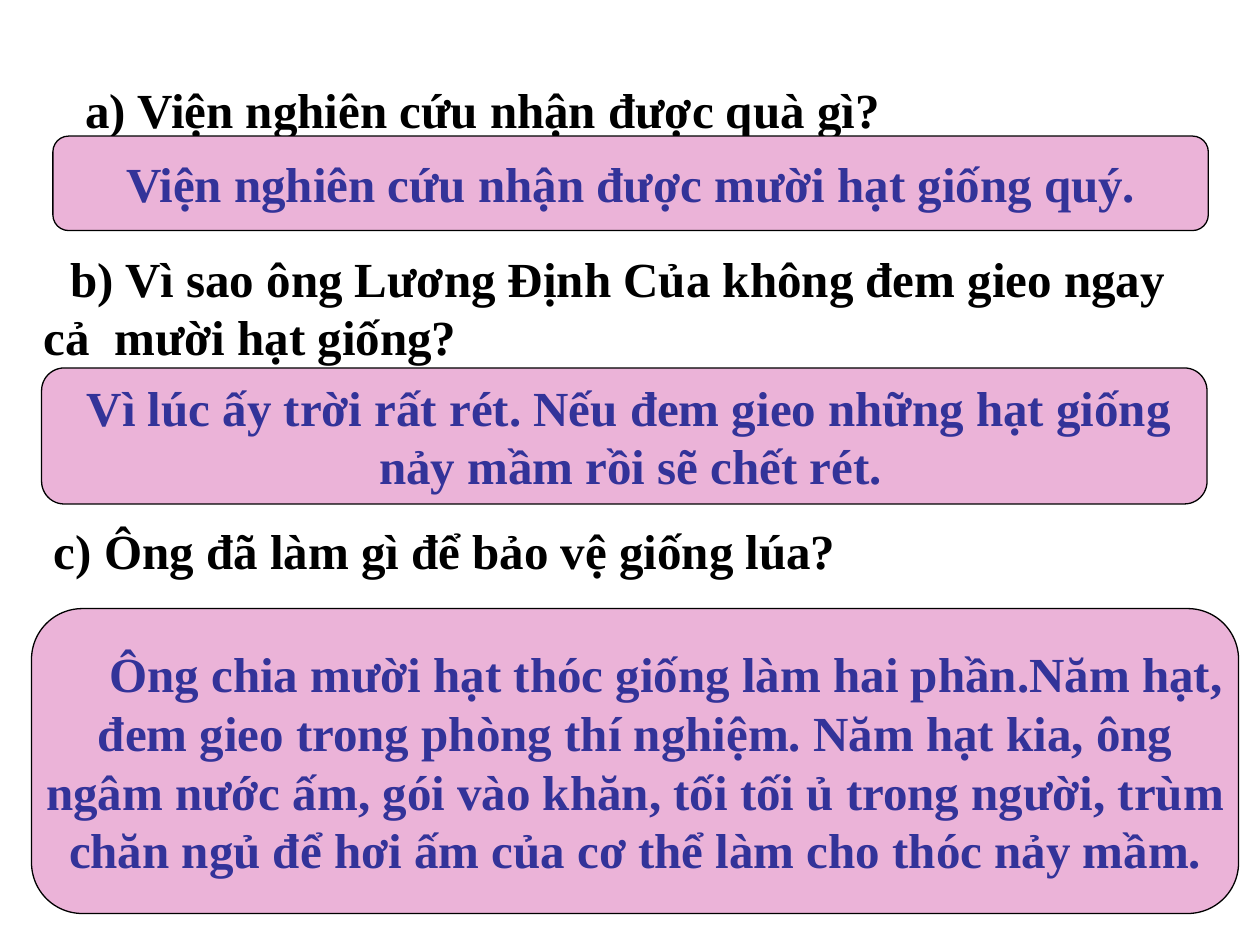
from pptx import Presentation
from pptx.dml.color import RGBColor
from pptx.enum.shapes import MSO_SHAPE
from pptx.enum.text import MSO_ANCHOR, MSO_AUTO_SIZE, PP_ALIGN
from pptx.util import Inches, Pt

BLACK = RGBColor(0x00, 0x00, 0x00)
PINK = RGBColor(0xEB, 0xB3, 0xD8)
INDIGO = RGBColor(0x33, 0x33, 0x99)

ITEMS = [
    ((0.58, 0.58, 8.92, 0.57), 0,
     "a) Viện nghiên cứu nhận được quà gì?",
     (0.42, 1.08, 9.17, 0.75),
     [(0, "Viện nghiên cứu nhận được mười hạt giống quý.")]),
    ((0.25, 1.92, 9.25, 1.03), 0.21,
     "b) Vì sao ông Lương Định Của không đem gieo ngay  cả  mười hạt giống?",
     (0.33, 2.92, 9.25, 1.08),
     [(0.07, "Vì lúc ấy trời rất rét. Nếu đem gieo những hạt giống"),
      (0.1, "nảy mầm rồi sẽ chết rét.")]),
    ((0.33, 4.08, 9.17, 0.57), 0,
     "c) Ông đã làm gì để bảo vệ giống lúa?",
     (0.25, 4.83, 9.58, 2.42),
     [(0.49, "Ông chia mười hạt thóc giống làm hai phần.Năm hạt,"),
      (0, "đem gieo trong phòng thí nghiệm. Năm hạt kia, ông"),
      (0, "ngâm nước ấm, gói vào khăn, tối tối ủ trong người, trùm"),
      (0, "chăn ngủ để hơi ấm của cơ thể làm cho thóc nảy mầm.")]),
]


def write_lines(tf, lines, color, align):
    for i, (indent, text) in enumerate(lines):
        p = tf.add_paragraph() if i else tf.paragraphs[0]
        p.text = text
        p.alignment = align
        p.font.name = "Times New Roman"
        p.font.size = Pt(28)
        p.font.bold = True
        p.font.color.rgb = color
        if indent:
            p._p.get_or_add_pPr().set("indent", str(Inches(indent)))


def add_question(s, box, indent, text):
    tf = s.shapes.add_textbox(*map(Inches, box)).text_frame
    tf.word_wrap = True
    tf.auto_size = MSO_AUTO_SIZE.SHAPE_TO_FIT_TEXT
    write_lines(tf, [(indent, text)], BLACK, PP_ALIGN.LEFT)


def add_answer(s, box, lines):
    sp = s.shapes.add_shape(MSO_SHAPE.FLOWCHART_ALTERNATE_PROCESS, *map(Inches, box))
    sp.shadow.inherit = False
    sp.fill.solid()
    sp.fill.fore_color.rgb = PINK
    sp.line.color.rgb = BLACK
    sp.line.width = Pt(0.75)
    tf = sp.text_frame
    tf.word_wrap = False
    tf.vertical_anchor = MSO_ANCHOR.MIDDLE
    write_lines(tf, lines, INDIGO, PP_ALIGN.CENTER)


def main():
    prs = Presentation()
    prs.slide_width, prs.slide_height = Inches(10), Inches(7.5)
    s = prs.slides.add_slide(prs.slide_layouts[6])
    for question_box, indent, question, answer_box, answer in ITEMS:
        add_question(s, question_box, indent, question)
        add_answer(s, answer_box, answer)
    prs.save("out.pptx")


if __name__ == "__main__":
    main()
